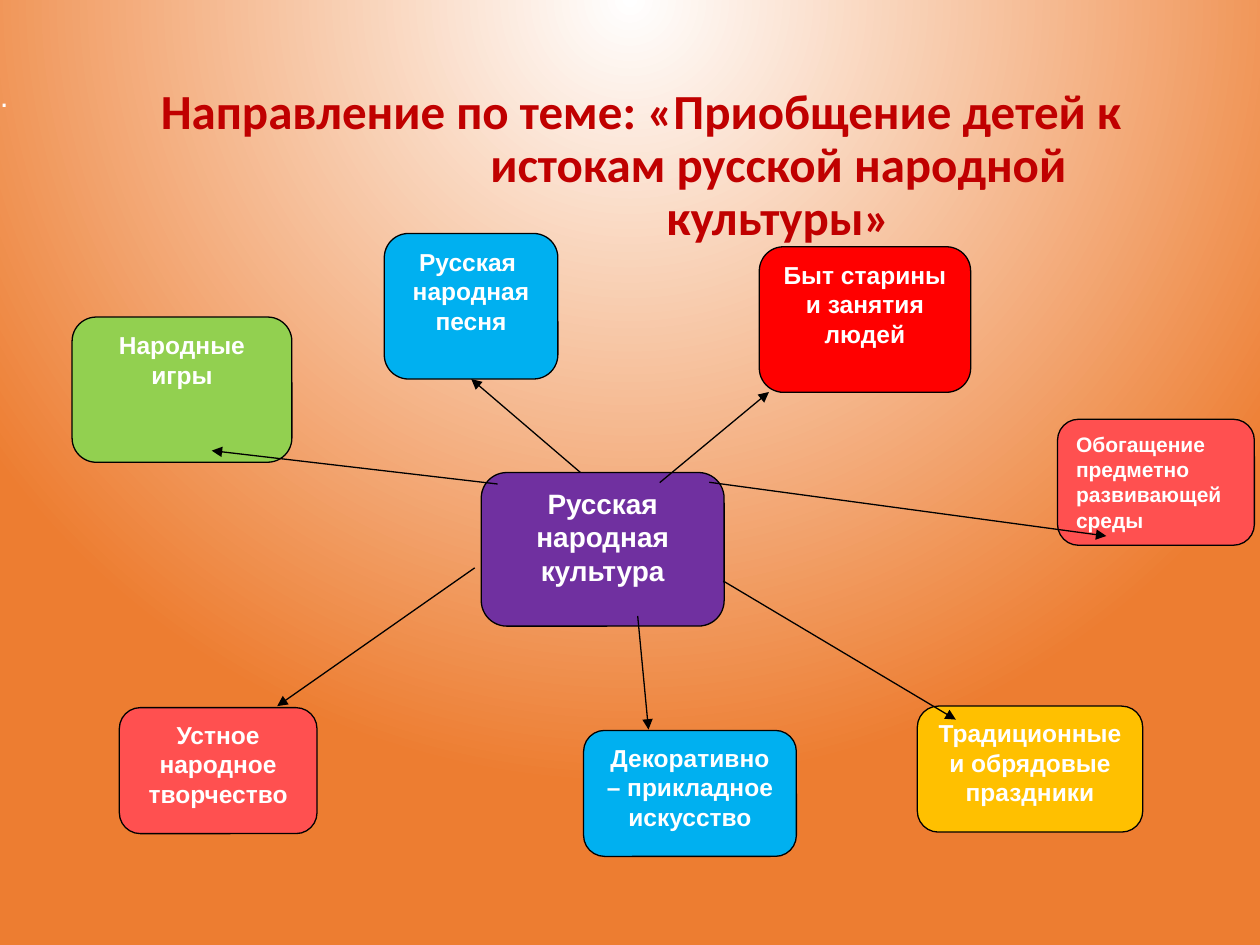
from lxml import etree
from pptx import Presentation
from pptx import util as u
from pptx.dml.color import RGBColor
from pptx.enum import shapes, text
from pptx.oxml import ns

WHITE = RGBColor(0xFF, 0xFF, 0xFF)
BLACK = RGBColor(0x00, 0x00, 0x00)
ORANGE = RGBColor(0xED, 0x7D, 0x31)
DARK_RED = RGBColor(0xC0, 0x00, 0x00)
PURPLE = RGBColor(0x70, 0x30, 0xA0)
GREEN = RGBColor(0x92, 0xD0, 0x50)
BLUE = RGBColor(0x00, 0xB0, 0xF0)
RED = RGBColor(0xFF, 0x00, 0x00)
CORAL = RGBColor(0xFF, 0x50, 0x50)
GOLD = RGBColor(0xFF, 0xC0, 0x00)

LEFT, CENTER = text.PP_ALIGN.LEFT, text.PP_ALIGN.CENTER

# text, left, top, width, height, fill, size, alignment
TOPICS = [
    ("Русская народная культура", 275, 270, 138.8, 87.8, PURPLE, 16, CENTER),
    ("Народные\nигры", 41.2, 181.2, 125.6, 83, GREEN, 14, CENTER),
    ("Русская \nнародная\nпесня", 219.6, 133.4, 99.2, 83.2, BLUE, 14, CENTER),
    ("Быт старины и занятия людей", 433.9, 141, 120.8, 83.2, RED, 14, CENTER),
    ("Обогащение предметно развивающей среды",
     604.3, 239.6, 112.5, 72, CORAL, 12, LEFT),
    ("Устное народное творчество", 68.2, 404.4, 113, 72, CORAL, 14, CENTER),
    ("Декоративно – прикладное искусство",
     333.5, 417.4, 121.6, 72, BLUE, 14, CENTER),
    ("Традиционные и обрядовые праздники",
     524.2, 403.5, 128.8, 72, GOLD, 14, CENTER),
]

# start x, start y, end x, end y
ARROWS = [
    (364.4, 352, 370.6, 416.9),
    (413.3, 332, 546.2, 411.2),
    (405.3, 275.6, 632.2, 306.3),
    (377, 275.8, 439.4, 224),
    (331.7, 270, 269.3, 216.6),
    (284.4, 276.6, 121, 257.5),
    (271.3, 324.5, 158.4, 403.5),
]


class Diagram:
    def __init__(self, page):
        self.page = page
        self.line_width = u.Pt(0.75)

    def background(self):
        """Fill the page with a gradient that spreads from above its top edge."""
        fill = self.page.background.fill
        fill.gradient()
        for stop, color, position in zip(fill.gradient_stops, (WHITE, ORANGE), (0, 1)):
            stop.color.rgb = color
            stop.position = position
        gradient = self.page.element.find(".//" + ns.qn("a:gradFill"))
        linear = gradient.find(ns.qn("a:lin"))
        circle = etree.Element(ns.qn("a:path"), path="circle")
        etree.SubElement(circle, ns.qn("a:fillToRect"),
                         l="50000", t="-80000", r="50000", b="180000")
        gradient.replace(linear, circle)

    def set_text(self, frame, words, font, size, color, bold=True, align=CENTER):
        frame.text = words
        for para in frame.paragraphs:
            para.alignment = align
            for span in para.runs:
                span.font.name = font
                span.font.size = u.Pt(size)
                span.font.bold = bold
                span.font.color.rgb = color

    def text_box(self, left, top, width, height):
        box = self.page.shapes.add_textbox(*map(u.Pt, (left, top, width, height)))
        frame = box.text_frame
        frame.word_wrap = True
        frame.vertical_anchor = text.MSO_ANCHOR.MIDDLE
        return frame

    def title(self, words):
        """Add two lines, the second one shifted to the right."""
        frame = self.text_box(49.7, 28.8, 645, 133.2)
        self.set_text(frame, words, "Calibri", 28, DARK_RED)
        for para, side, indent in zip(frame.paragraphs, ("marR", "marL"), (12, 157)):
            para.line_spacing = 0.9
            para._p.get_or_add_pPr().set(side, str(u.Pt(indent)))

    def dot(self):
        frame = self.text_box(0, 39, 20, 30)
        frame.margin_left = 0
        self.set_text(frame, ".", "Arial", 18, WHITE, bold=False, align=LEFT)

    def topic(self, words, left, top, width, height, fill, size, align):
        box = self.page.shapes.add_shape(
            shapes.MSO_SHAPE.ROUNDED_RECTANGLE,
            *map(u.Pt, (left, top, width, height)))
        box.shadow.inherit = False
        box.fill.solid()
        box.fill.fore_color.rgb = fill
        box.line.color.rgb = BLACK
        box.line.width = self.line_width
        frame = box.text_frame
        frame.word_wrap = True
        frame.vertical_anchor = text.MSO_ANCHOR.TOP
        self.set_text(frame, words, "Arial", size, WHITE, align=align)

    def arrow(self, *ends):
        line = self.page.shapes.add_connector(
            shapes.MSO_CONNECTOR.STRAIGHT, *map(u.Pt, ends))
        line.line.color.rgb = BLACK
        line.line.width = self.line_width
        etree.SubElement(line.line._get_or_add_ln(), ns.qn("a:tailEnd"), type="triangle")
        etree.SubElement(line._element.spPr, ns.qn("a:effectLst"))


def main():
    deck = Presentation()
    deck.slide_width, deck.slide_height = u.Pt(720), u.Pt(540)
    diagram = Diagram(deck.slides.add_slide(deck.slide_layouts[6]))
    diagram.background()
    diagram.title("Направление по теме: «Приобщение детей к\n"
                  "истокам русской народной культуры»")
    for topic in TOPICS:
        diagram.topic(*topic)
    for ends in ARROWS:
        diagram.arrow(*ends)
    diagram.dot()
    deck.save("out.pptx")


if __name__ == "__main__":
    main()
